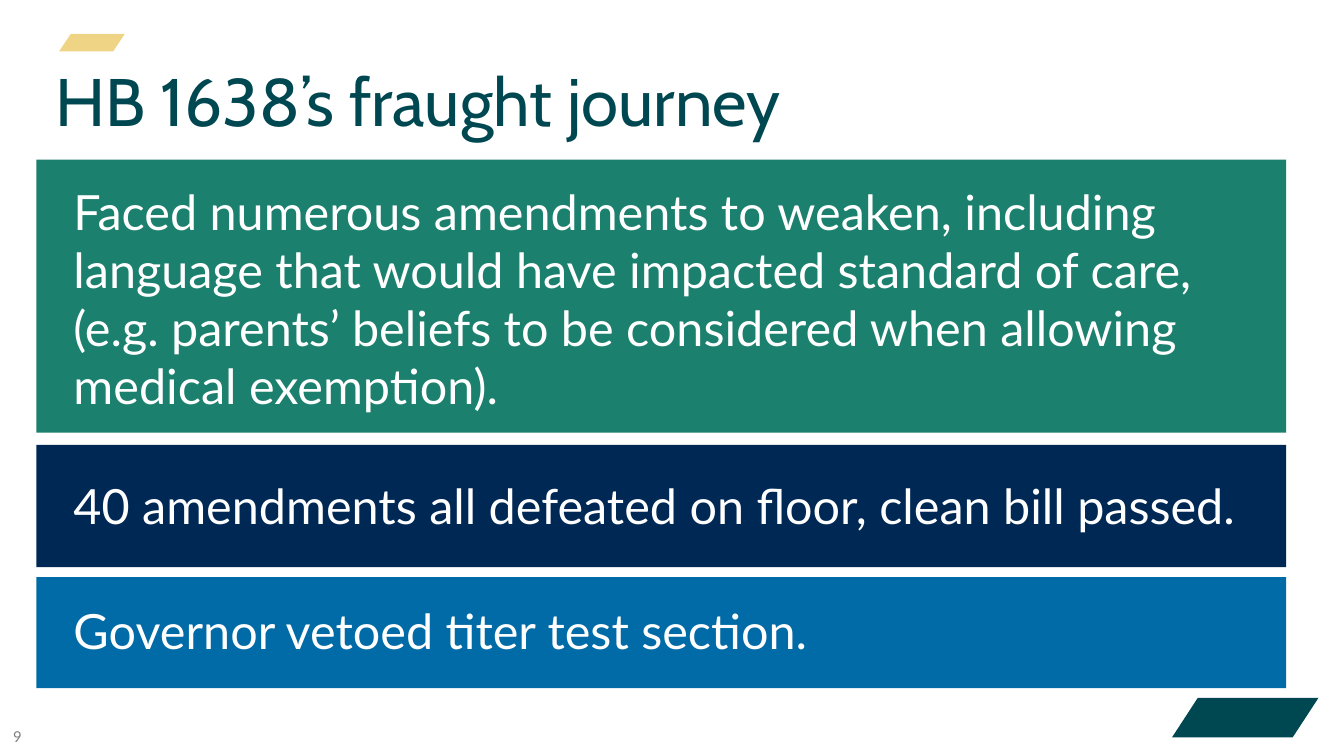
from dataclasses import dataclass

from pptx import Presentation
from pptx.dml.color import RGBColor
from pptx.enum.shapes import MSO_SHAPE as Shape
from pptx.enum.text import MSO_ANCHOR as Anchor, MSO_AUTO_SIZE as AutoSize, PP_ALIGN as Align
from pptx.util import Cm, Pt


@dataclass(frozen=True)
class Theme:
    teal: str = "004851"
    gold: str = "EED484"
    green: str = "1B806D"
    navy: str = "002855"
    blue: str = "006BA6"
    white: str = "FFFFFF"
    gray: str = "808080"
    heading_font: str = "Cabin"
    body_font: str = "Lato"
    heading_size: int = 36
    body_size: int = 26
    number_size: int = 8


theme = Theme()


def write(frame, text, *, font=theme.body_font, size=theme.body_size,
          color=theme.white, anchor=Anchor.TOP):
    """Fill a text frame, one paragraph for each line of text."""
    frame.text = text
    frame.word_wrap = True
    frame.auto_size = AutoSize.NONE
    frame.vertical_anchor = anchor
    for paragraph in frame.paragraphs:
        paragraph.alignment = Align.LEFT
        paragraph.line_spacing = 1.0
        paragraph.space_before = Pt(0)
        paragraph.font.name = font
        paragraph.font.size = Pt(size)
        paragraph.font.color.rgb = RGBColor.from_string(color)


def paint(shape, color):
    shape.shadow.inherit = False
    shape.fill.solid()
    shape.fill.fore_color.rgb = RGBColor.from_string(color)
    shape.line.fill.background()


deck = Presentation()
deck.slide_width, deck.slide_height = Cm(25.4), Cm(14.29)
slide = deck.slides.add_slide(deck.slide_layouts.get_by_name("Title Only"))
shapes = slide.shapes

# Slanted marks: corner badge and title accent
for left, top, width, height, slant, color in (
    (22.15, 13.19, 2.77, 0.75, 0.49, theme.teal),
    (1.12, 0.64, 1.24, 0.33, 0.22, theme.gold),
):
    right, bottom = left + width, top + height
    outline = shapes.build_freeform(Cm(left + slant), Cm(top))
    outline.add_line_segments([
        (Cm(left), Cm(bottom)),
        (Cm(right - slant), Cm(bottom)),
        (Cm(right), Cm(top)),
    ])
    paint(outline.convert_to_shape(), color)

page_number = shapes.add_textbox(Cm(0), Cm(13.54), Cm(0.84), Cm(0.76))
write(page_number.text_frame, "9", size=theme.number_size, color=theme.gray,
      anchor=Anchor.MIDDLE)

title = shapes.title
title.left, title.top, title.width, title.height = Cm(0.79), Cm(0.76), Cm(19.58), Cm(2.24)
write(title.text_frame, "HB 1638’s fraught journey", font=theme.heading_font,
      size=theme.heading_size, color=theme.teal, anchor=Anchor.MIDDLE)

# Colour bands: top, height, inset of the text from the top, colour, text
bands = (
    (3.02, 5.16, 0.29, theme.green,
     "Faced numerous amendments to weaken, including language that would have "
     "impacted standard of care,\n"
     "(e.g. parents’ beliefs to be considered when allowing medical exemption)."),
    (8.41, 2.31, 0.46, theme.navy,
     "40 amendments all defeated on floor, clean bill passed."),
    (10.91, 2.1, 0.32, theme.blue, "Governor vetoed titer test section."),
)
for top, height, inset, color, message in bands:
    band = shapes.add_shape(Shape.RECTANGLE, Cm(0.69), Cm(top), Cm(23.62), Cm(height))
    paint(band, color)
    statement = shapes.add_textbox(Cm(1.14), Cm(top + inset), Cm(22.7), Cm(height - 2 * inset))
    write(statement.text_frame, message)

deck.save("out.pptx")
